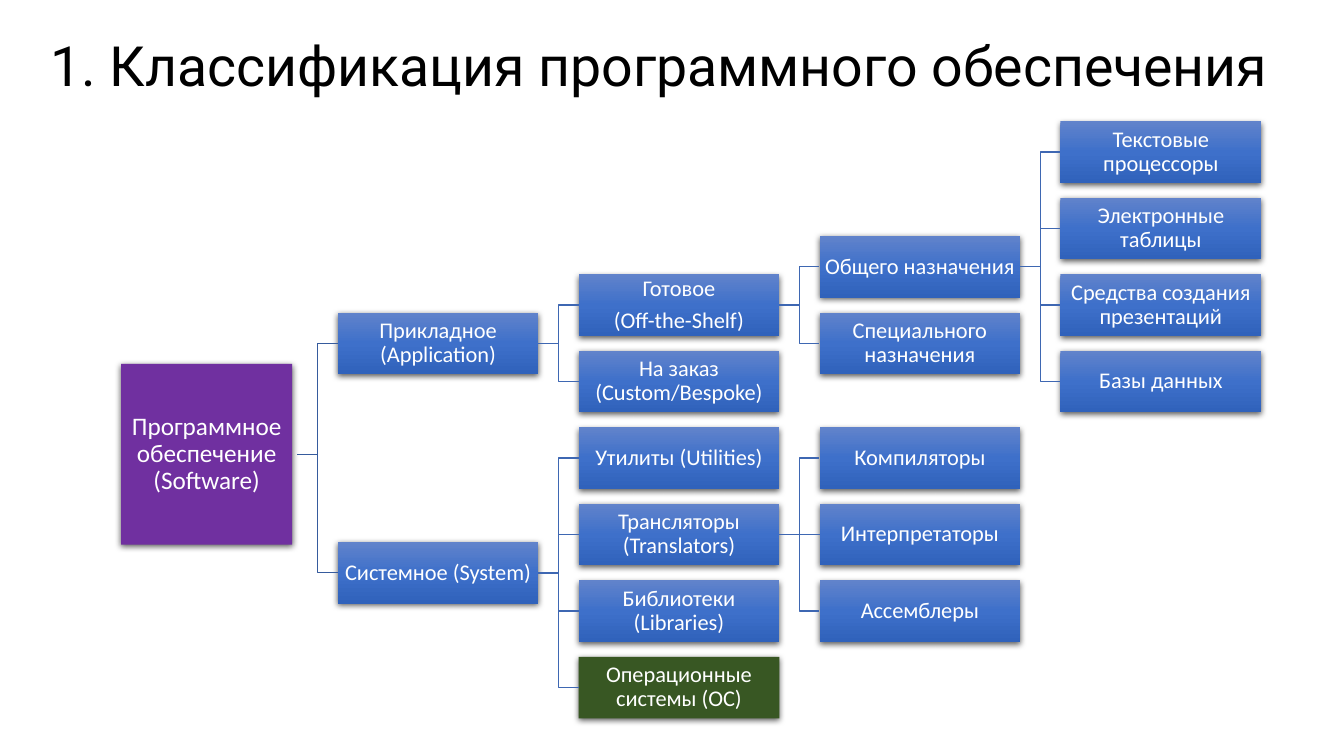
import dataclasses

import lxml.etree
import pptx
import pptx.dml.color
import pptx.enum.shapes
import pptx.enum.text
import pptx.oxml.ns
import pptx.shapes.autoshape
import pptx.slide
import pptx.text.text
import pptx.util


@dataclasses.dataclass(frozen=True)
class Theme:
    title: str = "000000"
    text: str = "FFFFFF"
    root: str = "7030A0"
    system: str = "385723"
    blue: tuple[str, ...] = ("6183CB", "3E70CA", "3062BB")
    shade: str = "000000"
    trunk: str = "365B9D"
    branch: str = "3E67B2"
    head: str = "Roboto"
    body: str = "Calibri"
    large: float = 39.6
    medium: float = 18
    small: float = 16


@dataclasses.dataclass(frozen=True)
class Node:
    row: float
    lines: tuple[str, ...]
    kids: tuple["Node", ...] = ()
    fill: str = ""


THEME = Theme()
WIDE, HIGH = 143.4, 43.9
LEFT, STEP = 241.2, 172.1
TOP, PITCH = 108.6, 54.65
ROOT_X, ROOT_W, ROOT_H = 86.6, 122.1, 129
GAP = 3.6

TREE = Node(3.95, ("Программное обеспечение (Software)",), (
    Node(2.5, ("Прикладное (Application)",), (
        Node(2, ("Готовое", "(Off-the-Shelf)"), (
            Node(1.5, ("Общего назначения",), (
                Node(0, ("Текстовые процессоры",)),
                Node(1, ("Электронные таблицы",)),
                Node(2, ("Средства создания презентаций",)),
                Node(3, ("Базы данных",)),
            )),
            Node(2.5, ("Специального назначения",)),
        )),
        Node(3, ("На заказ (Custom/Bespoke)",)),
    )),
    Node(5.5, ("Системное (System)",), (
        Node(4, ("Утилиты (Utilities)",)),
        Node(5, ("Трансляторы (Translators)",), (
            Node(4, ("Компиляторы",)),
            Node(5, ("Интерпретаторы",)),
            Node(6, ("Ассемблеры",)),
        )),
        Node(6, ("Библиотеки (Libraries)",)),
        Node(7, ("Операционные системы (ОС)",), fill=THEME.system),
    )),
), THEME.root)


def paint(code: str) -> pptx.dml.color.RGBColor:
    return pptx.dml.color.RGBColor.from_string(code)


def add(parent: lxml.etree._Element, tag: str, **attrs: str) -> lxml.etree._Element:
    return lxml.etree.SubElement(parent, pptx.oxml.ns.qn(tag), attrs)


def middle(row: float) -> float:
    return TOP + PITCH * row


def write(frame: pptx.text.text.TextFrame, lines: tuple[str, ...],
          font: str, size: float, color: str) -> None:
    frame.word_wrap = True
    frame.vertical_anchor = pptx.enum.text.MSO_ANCHOR.MIDDLE
    for index, line in enumerate(lines):
        para = frame.add_paragraph() if index else frame.paragraphs[0]
        para.line_spacing = 0.9
        if index < len(lines) - 1:
            para.space_after = pptx.util.Pt(0.35 * size)
        run = para.add_run()
        run.text = line
        run.font.name = font
        run.font.size = pptx.util.Pt(size)
        run.font.color.rgb = paint(color)


def shade(box: pptx.shapes.autoshape.Shape) -> None:
    box.shadow.inherit = False
    effects = box.element.spPr.find(pptx.oxml.ns.qn("a:effectLst"))
    outer = add(effects, "a:outerShdw", blurRad=str(pptx.util.Pt(4.5)),
                dist=str(pptx.util.Pt(1.5)), dir="5400000",
                algn="ctr", rotWithShape="0")
    add(add(outer, "a:srgbClr", val=THEME.shade), "a:alpha", val="63000")


def blend(box: pptx.shapes.autoshape.Shape) -> None:
    box.fill.gradient()
    box.fill.gradient_angle = 270
    stops = next(box.element.spPr.iter(pptx.oxml.ns.qn("a:gsLst")))
    for stop in list(stops):
        stops.remove(stop)
    for index, color in enumerate(THEME.blue):
        add(add(stops, "a:gs", pos=str(index * 50000)), "a:srgbClr", val=color)


def place(slide: pptx.slide.Slide, node: Node, level: int) -> pptx.shapes.autoshape.Shape:
    if level:
        left, wide, high = LEFT + STEP * (level - 1), WIDE, HIGH
        size = THEME.small
    else:
        left, wide, high = ROOT_X, ROOT_W, ROOT_H
        size = THEME.medium
    box = slide.shapes.add_shape(
        pptx.enum.shapes.MSO_SHAPE.RECTANGLE, pptx.util.Pt(left),
        pptx.util.Pt(middle(node.row) - high / 2), pptx.util.Pt(wide), pptx.util.Pt(high))
    if node.fill:
        box.fill.solid()
        box.fill.fore_color.rgb = paint(node.fill)
    else:
        blend(box)
    box.line.fill.background()
    shade(box)
    frame = box.text_frame
    frame.margin_left = frame.margin_right = pptx.util.Pt(0.8)
    frame.margin_top = frame.margin_bottom = pptx.util.Pt(0.8)
    write(frame, node.lines, THEME.body, size, THEME.text)
    for para in frame.paragraphs:
        para.alignment = pptx.enum.text.PP_ALIGN.CENTER
    return box


def link(slide: pptx.slide.Slide, start: pptx.shapes.autoshape.Shape,
         end: pptx.shapes.autoshape.Shape, level: int, flat: bool) -> None:
    kinds = pptx.enum.shapes.MSO_CONNECTOR
    wire = slide.shapes.add_connector(
        kinds.STRAIGHT if flat else kinds.ELBOW,
        start.left + start.width + (0 if level else pptx.util.Pt(GAP)),
        start.top + start.height // 2, end.left, end.top + end.height // 2)
    if level:
        wire.begin_connect(start, 3)
    wire.end_connect(end, 1)
    wire.line.width = pptx.util.Pt(1)
    wire.line.color.rgb = paint(THEME.branch if level else THEME.trunk)
    add(wire.element.spPr, "a:effectLst")


def grow(slide: pptx.slide.Slide, node: Node, level: int = 0) -> pptx.shapes.autoshape.Shape:
    box = place(slide, node, level)
    for kid in node.kids:
        link(slide, box, grow(slide, kid, level + 1), level, kid.row == node.row)
    return box


def main() -> None:
    deck = pptx.Presentation()
    deck.slide_width = pptx.util.Pt(960)
    deck.slide_height = pptx.util.Pt(540)
    slide = deck.slides.add_slide(deck.slide_layouts[6])
    title = slide.shapes.add_textbox(pptx.util.Pt(28.8), pptx.util.Pt(10.8),
                                     pptx.util.Pt(902.9), pptx.util.Pt(75.6))
    write(title.text_frame, ("1. Классификация программного обеспечения",),
          THEME.head, THEME.large, THEME.title)
    grow(slide, TREE)
    deck.save("out.pptx")


if __name__ == "__main__":
    main()
